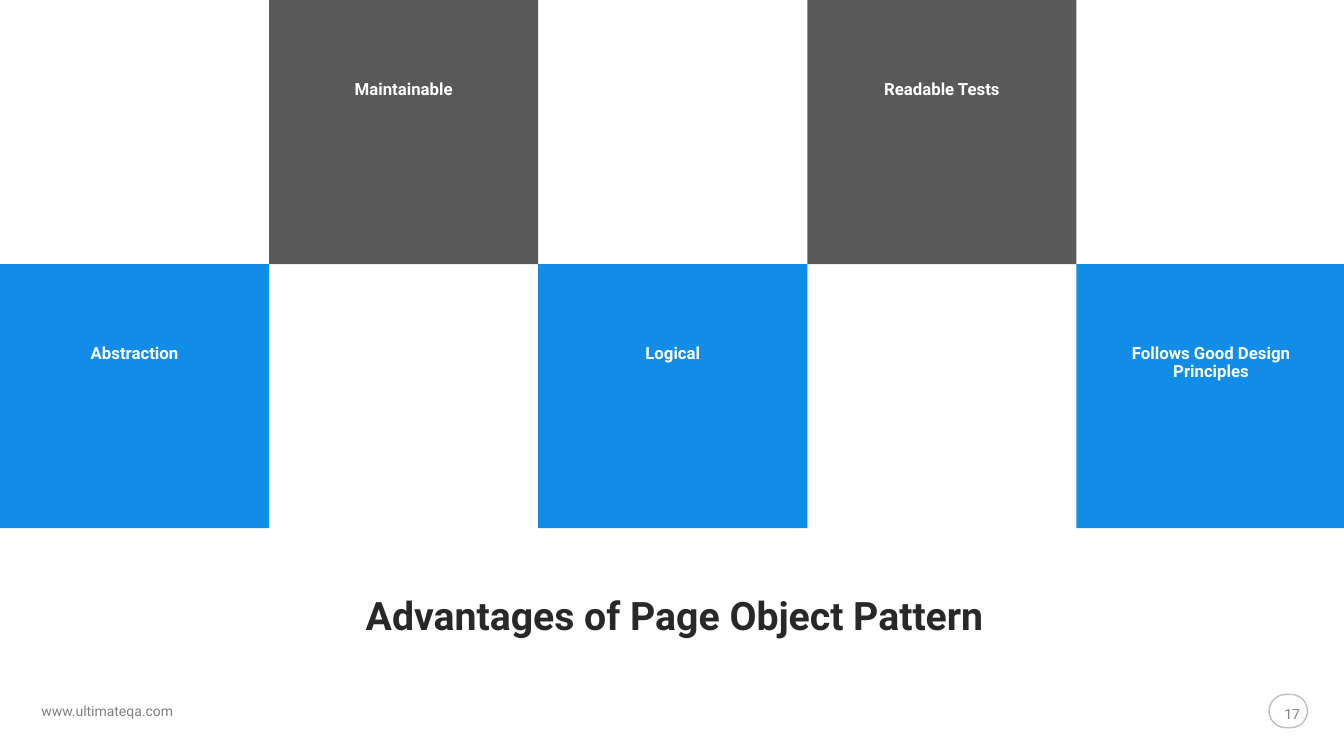
from pptx import Presentation
from pptx.dml.color import RGBColor
from pptx.enum.shapes import MSO_SHAPE as Preset
from pptx.enum.text import MSO_ANCHOR as Anchor, MSO_AUTO_SIZE as AutoSize, PP_ALIGN as Align
from pptx.util import Pt

SLIDE_W, SLIDE_H = 960, 540
TILE_W, TILE_H = 192.24, 188.64
GRAY, BLUE = "595959", "118CE7"
ADVANTAGES = ["Abstraction", "Maintainable", "Logical", "Readable Tests",
              "Follows Good Design Principles"]

FRAME = {"margin_left": 0, "margin_top": 0, "margin_right": 0, "margin_bottom": 0,
         "word_wrap": True, "auto_size": AutoSize.NONE}
TITLE_FONT = {"name": "Roboto", "size": Pt(28), "bold": True}
LABEL_FONT = {"name": "Roboto", "size": Pt(12), "bold": True}
FOOTER_FONT = {"name": "Roboto", "size": Pt(10), "bold": False}


def color(hex_code):
    return RGBColor.from_string(hex_code)


def apply(target, values):
    for name, value in values.items():
        setattr(target, name, value)


def write(holder, words, font, ink, align=Align.CENTER, anchor=Anchor.TOP, **spacing):
    frame = holder.text_frame
    apply(frame, {**FRAME, "vertical_anchor": anchor})
    frame.text = words
    line = frame.paragraphs[0]
    apply(line, {"alignment": align, **spacing})
    apply(line.font, font)
    line.font.color.rgb = color(ink)


def text_box(slide, box):
    return slide.shapes.add_textbox(*map(Pt, box))


# Checkerboard: labelled tiles alternate between the lower and upper row
def add_checkerboard(slide, left, top):
    for column, advantage in enumerate(ADVANTAGES):
        upper = column % 2 == 1
        x = left + column * TILE_W
        y = top if upper else top + TILE_H
        tile = slide.shapes.add_shape(Preset.RECTANGLE, Pt(x), Pt(y), Pt(TILE_W), Pt(TILE_H))
        tile.shadow.inherit = False
        tile.fill.solid()
        tile.fill.fore_color.rgb = color(GRAY if upper else BLUE)
        tile.line.fill.background()
        label = text_box(slide, (x + 34.5, y + 57.6, TILE_W - 69, 25))
        write(label, advantage, LABEL_FONT, "FFFFFF", line_spacing=0.9)


# Title below the tiles
def add_title(slide, left, top, width, height):
    title = slide.shapes.title
    apply(title, {"left": Pt(left), "top": Pt(top), "width": Pt(width), "height": Pt(height)})
    write(title, "Advantages of Page Object Pattern", TITLE_FONT, "282828",
          line_spacing=1.2, space_after=Pt(4))


# Footer: web address on the left, page number in a pill on the right
def add_footer(slide, left, top, width):
    address = text_box(slide, (left, top + 5.8, 110, 13))
    write(address, "www.ultimateqa.com", FOOTER_FONT, "808080", Align.LEFT)

    pill_x = left + width - 27.4
    pill = slide.shapes.add_shape(Preset.ROUNDED_RECTANGLE, Pt(pill_x), Pt(top),
                                  Pt(27.4), Pt(23.8))
    pill.shadow.inherit = False
    pill.adjustments[0] = 0.5
    pill.fill.background()
    pill.line.color.rgb = color("BFBFBF")
    pill.line.width = Pt(1)
    page_number = text_box(slide, (pill_x + 4.3, top + 3.6, 24.5, 20.2))
    write(page_number, "17", FOOTER_FONT, "808080", anchor=Anchor.MIDDLE)


def main():
    deck = Presentation()
    deck.slide_width, deck.slide_height = Pt(SLIDE_W), Pt(SLIDE_H)
    slide = deck.slides.add_slide(deck.slide_layouts[5])
    add_checkerboard(slide, 0, 0)
    add_title(slide, 85, 415.4, 793.4, 36.7)
    add_footer(slide, 29.5, 496, 904.4)
    deck.save("out.pptx")


if __name__ == "__main__":
    main()
